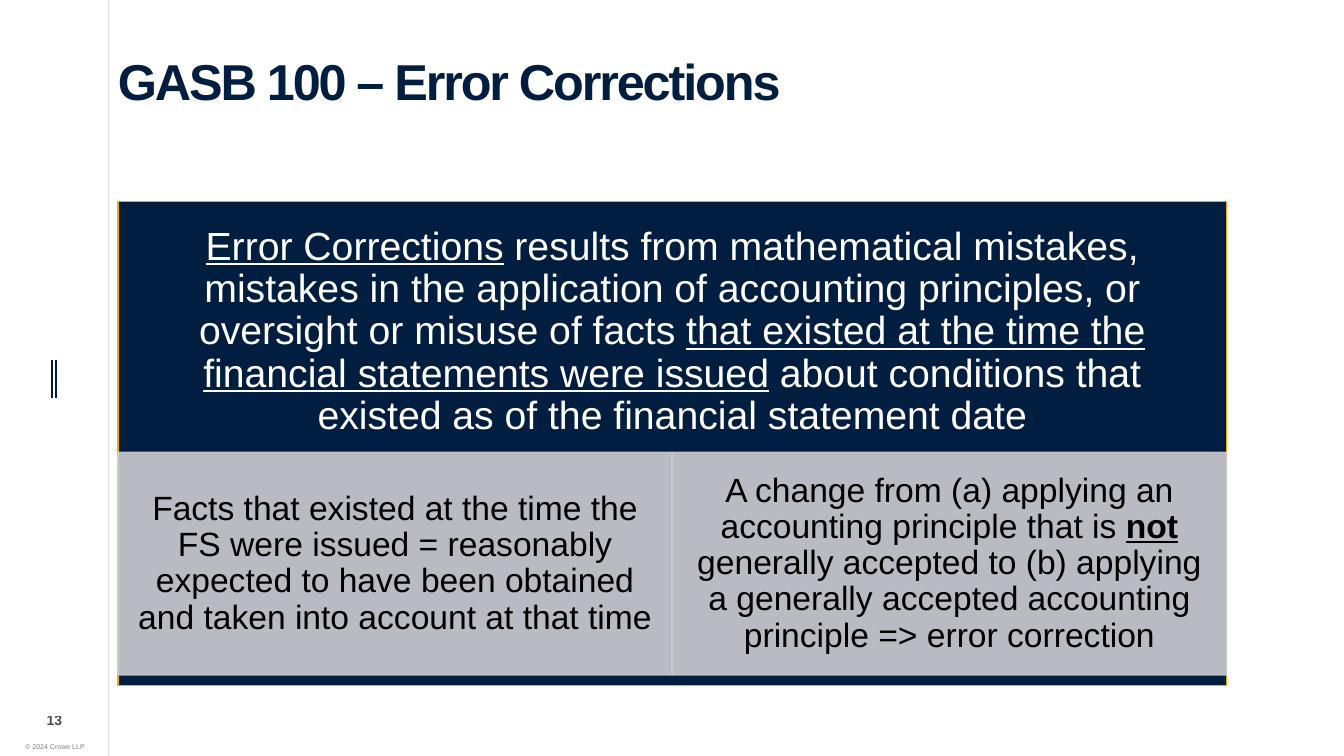
from dataclasses import dataclass

from lxml import etree
from pptx import Presentation
from pptx.dml.color import RGBColor
from pptx.enum.shapes import MSO_CONNECTOR, MSO_SHAPE
from pptx.enum.text import MSO_ANCHOR, MSO_AUTO_SIZE, PP_ALIGN
from pptx.oxml.ns import qn
from pptx.util import Cm, Pt

STRAIGHT = MSO_CONNECTOR.STRAIGHT
RECTANGLE = MSO_SHAPE.RECTANGLE
TOP, MIDDLE = MSO_ANCHOR.TOP, MSO_ANCHOR.MIDDLE
LEFT, CENTER = PP_ALIGN.LEFT, PP_ALIGN.CENTER
NO_AUTOFIT = MSO_AUTO_SIZE.NONE
TITLE_ONLY = 5


@dataclass(frozen=True)
class Theme:
    font: str = "Arial"
    navy: str = "011E41"
    gold: str = "F5A800"
    silver: str = "CCCDCF"
    white: str = "FFFFFF"
    black: str = "000000"
    gray: str = "808080"
    title_size: float = 36
    definition_size: float = 28
    panel_size: float = 24
    number_size: float = 10
    copyright_size: float = 5


class SlideBuilder:
    def __init__(self, deck, theme):
        self.theme = theme
        self.page = deck.slides.add_slide(deck.slide_layouts[TITLE_ONLY])

    def fade(self, element, percent):
        for color in element.iter(qn("a:srgbClr")):
            etree.SubElement(color, qn("a:alpha"), val=str(percent * 1000))

    def fill_text(self, shape, spans, size, color, bold=None, align=CENTER, anchor=MIDDLE,
                  insets=(0, 0, 0, 0), spacing=None, wrap=True):
        frame = shape.text_frame
        frame.word_wrap = wrap
        frame.auto_size = NO_AUTOFIT
        frame.vertical_anchor = anchor
        (frame.margin_left, frame.margin_top,
         frame.margin_right, frame.margin_bottom) = [Cm(inset) for inset in insets]
        para = frame.paragraphs[0]
        para.alignment = align
        para.line_spacing = spacing
        para.font.name = self.theme.font
        para.font.size = Pt(size)
        para.font.bold = bold
        para.font.color.rgb = RGBColor.from_string(color)
        for text, *marks in spans:
            span = para.add_run()
            span.text = text
            if "underline" in marks:
                span.font.underline = True
            if "bold" in marks:
                span.font.bold = True
        return para

    def title(self, text, left, top, width, height):
        shape = self.page.shapes.title
        shape.left, shape.top, shape.width, shape.height = map(Cm, (left, top, width, height))
        para = self.fill_text(shape, [(text,)], self.theme.title_size, self.theme.navy,
                              bold=True, align=LEFT, anchor=TOP, insets=(0, 0.53, 0, 0),
                              spacing=0.8)
        para.runs[0].font._element.set("spc", "-150")

    def text(self, spans, left, top, width, height, size, color, **style):
        box = self.page.shapes.add_textbox(*map(Cm, (left, top, width, height)))
        self.fill_text(box, spans, size, color, **style)
        return box

    def block(self, left, top, width, height, fill, line):
        shape = self.page.shapes.add_shape(RECTANGLE, *map(Cm, (left, top, width, height)))
        shape.shadow.inherit = False
        shape.fill.solid()
        shape.fill.fore_color.rgb = RGBColor.from_string(fill)
        shape.line.color.rgb = RGBColor.from_string(line)
        shape.line.width = Pt(1)
        return shape

    def panel(self, spans, left, top, width, height):
        shape = self.block(left, top, width, height, self.theme.silver, self.theme.silver)
        self.fade(shape._element.spPr, 90)
        self.fill_text(shape, spans, self.theme.panel_size, self.theme.black,
                       insets=(0.48, 0.08, 0.48, 0.08), spacing=0.9)

    def rule(self, x, top, bottom, color, weight, opacity=100):
        line = self.page.shapes.add_connector(STRAIGHT, Cm(x), Cm(top), Cm(x), Cm(bottom))
        line.line.color.rgb = RGBColor.from_string(color)
        line.line.width = Pt(weight)
        properties = line._element.spPr
        etree.SubElement(properties, qn("a:effectLst"))
        if opacity < 100:
            self.fade(properties, opacity)


def main():
    theme = Theme()
    deck = Presentation()
    deck.slide_width, deck.slide_height = Cm(33.87), Cm(19.05)
    slide = SlideBuilder(deck, theme)

    for x in (1.3, 1.42):
        slide.rule(x, 9.07, 10.03, theme.navy, 1.5)
    slide.rule(2.74, 0, 19.05, theme.black, 0.5, opacity=20)
    slide.text([("© 2024 Crowe LLP",)], 0.36, 18.57, 2.06, 0.48,
               theme.copyright_size, theme.gray, wrap=False)

    left, top, width = 2.97, 5.08, 27.94
    slide.title("GASB 100 – Error Corrections", left, 1.02, width, 3.81)
    slide.block(left, top, width, 12.19, theme.navy, theme.gold)
    definition = [
        ("Error Corrections", "underline"),
        (" results from mathematical mistakes, mistakes in the application of accounting "
         "principles, or oversight or misuse of facts ",),
        ("that existed at the time the financial statements were issued", "underline"),
        (" about conditions that existed as of the financial statement date",),
    ]
    slide.text(definition, left, top, width, 6.58, theme.definition_size, theme.white,
               insets=(0.56, 0.56, 0.56, 0.56), spacing=0.9)

    panels = [
        [("Facts that existed at the time the FS were issued = reasonably expected to have "
          "been obtained and taken into account at that time",)],
        [("A change from (a) applying an accounting principle that is ",),
         ("not", "bold", "underline"),
         (" generally accepted to (b) applying a generally accepted accounting principle "
          "=> error correction",)],
    ]
    panel_width = width / len(panels)
    for index, spans in enumerate(panels):
        slide.panel(spans, left + index * panel_width, 11.4, panel_width, 5.61)

    number = slide.text([("13",)], 0.66, 17.83, 1.42, 0.64,
                        theme.number_size, theme.black, bold=True)
    slide.fade(number._element, 70)

    deck.save("out.pptx")


if __name__ == "__main__":
    main()
